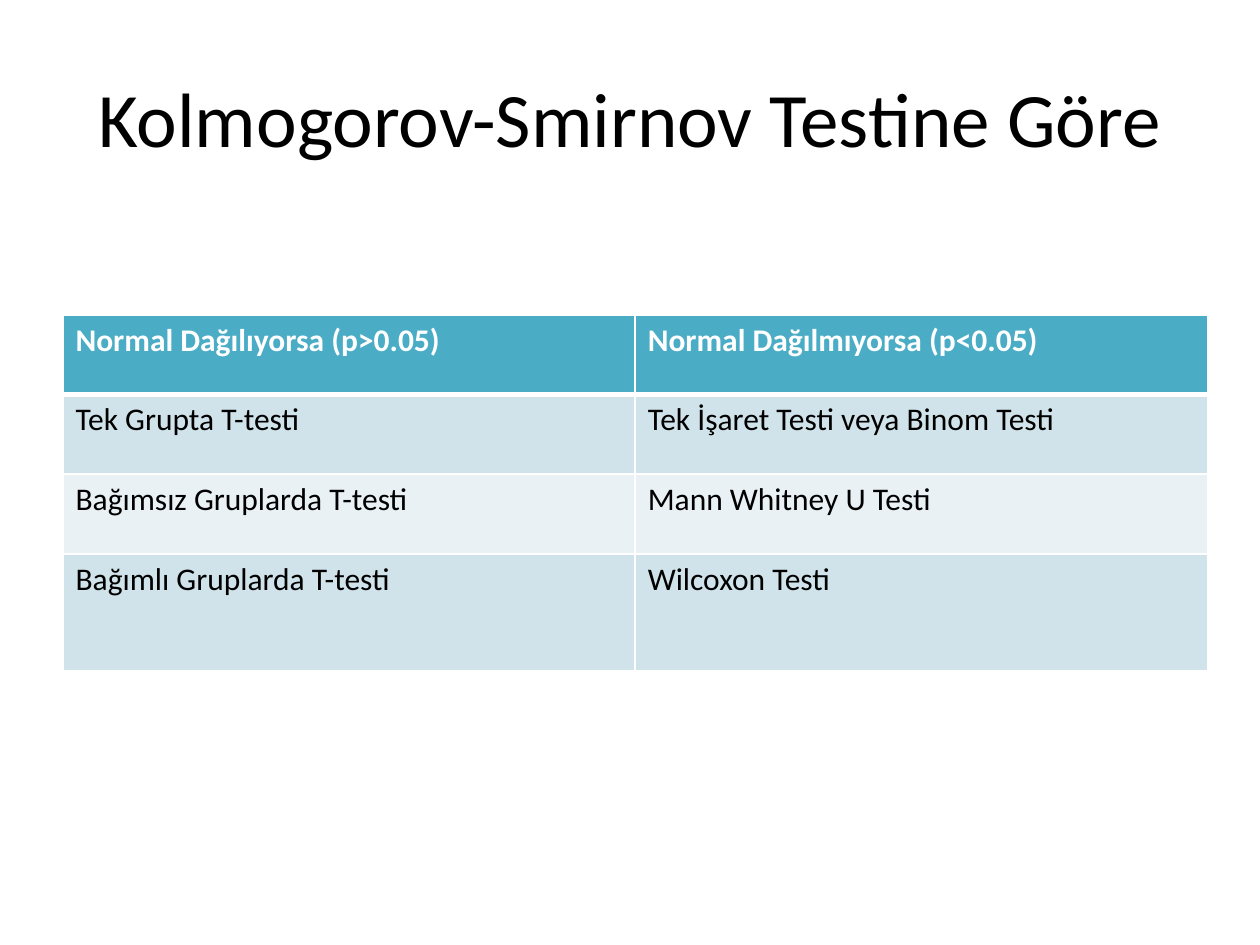
from lxml import etree
from pptx import Presentation, util as u
from pptx.dml.color import RGBColor
from pptx.enum import text
from pptx.oxml import ns

HEAD = {"size": u.Pt(18), "name": "Calibri", "bold": True}
BODY = {**HEAD, "bold": False}
TITLE = {**BODY, "size": u.Pt(44)}
ROWS = [
    ("Normal Dağılıyorsa (p>0.05)", "Normal Dağılmıyorsa (p<0.05)"),
    ("Tek Grupta T-testi", "Tek İşaret Testi veya Binom Testi"),
    ("Bağımsız Gruplarda T-testi", "Mann Whitney U Testi"),
    ("Bağımlı Gruplarda T-testi", "Wilcoxon Testi"),
]
HEIGHTS = [45.5, 45.5, 45.5, 67]


def paint(fill, color):
    fill.solid()
    fill.fore_color.rgb = RGBColor.from_string(color)


def place(item, *box):
    item.left, item.top, item.width, item.height = map(u.Pt, box)


class Deck:
    """Holds the table style and the current slide."""

    ink, white, head = "000000", "FFFFFF", "4BACC6"
    bands = ("D0E3EA", "E9F1F5")

    def __init__(self):
        self.show = Presentation()
        self.show.slide_width, self.show.slide_height = u.Pt(720), u.Pt(540)
        self.slide = self.show.slides.add_slide(self.show.slide_layouts[5])
        paint(self.slide.background.fill, self.white)

    def label(self, frame, words, style, color):
        part = frame.paragraphs[0]
        run = part.add_run()
        run.text = words
        for key, value in style.items():
            setattr(run.font, key, value)
        paint(run.font.fill, color)
        return part

    def title(self, words, *box):
        shape = self.slide.shapes.title
        place(shape, *box)
        shape.text_frame.vertical_anchor = text.MSO_ANCHOR.MIDDLE
        part = self.label(shape.text_frame, words, TITLE, self.ink)
        part.alignment = text.PP_ALIGN.CENTER

    def edge(self, cell, side, width):
        props = cell._tc.get_or_add_tcPr()
        line = etree.SubElement(props, ns.qn("a:ln" + side), w=str(u.Pt(width)))
        fill = etree.SubElement(line, ns.qn("a:solidFill"))
        etree.SubElement(fill, ns.qn("a:srgbClr"), val=self.white)

    def table(self, rows, heights, left, top, width):
        frame = self.slide.shapes.add_table(
            len(rows), len(rows[0]), *map(u.Pt, (left, top, width, sum(heights))))
        grid = frame.table
        for r, (row, height) in enumerate(zip(rows, heights)):
            grid.rows[r].height = u.Pt(height)
            first = r == 0
            color = self.head if first else self.bands[(r - 1) % 2]
            for c, words in enumerate(row):
                cell = grid.cell(r, c)
                self.label(cell.text_frame, words, HEAD if first else BODY,
                           self.white if first else self.ink)
                # The rule under the header is shared by rows 0 and 1.
                for side in "LRTB":
                    thick = (r, side) in ((0, "B"), (1, "T"))
                    self.edge(cell, side, 3 if thick else 1)
                paint(cell.fill, color)


def main():
    deck = Deck()
    deck.title("Kolmogorov-Smirnov Testine Göre", 36, 21.6, 648, 90)
    deck.table(ROWS, HEIGHTS, 36, 180, 654)
    deck.show.save("out.pptx")


if __name__ == "__main__":
    main()
